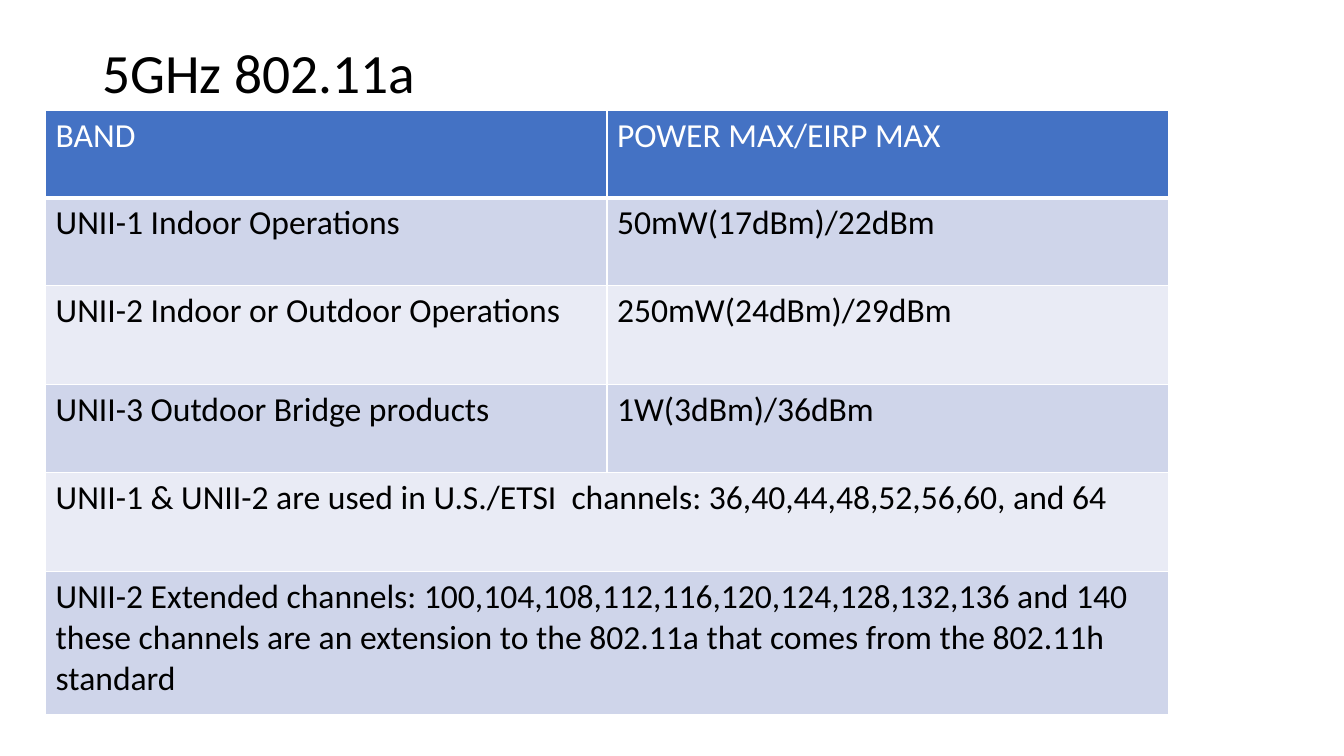
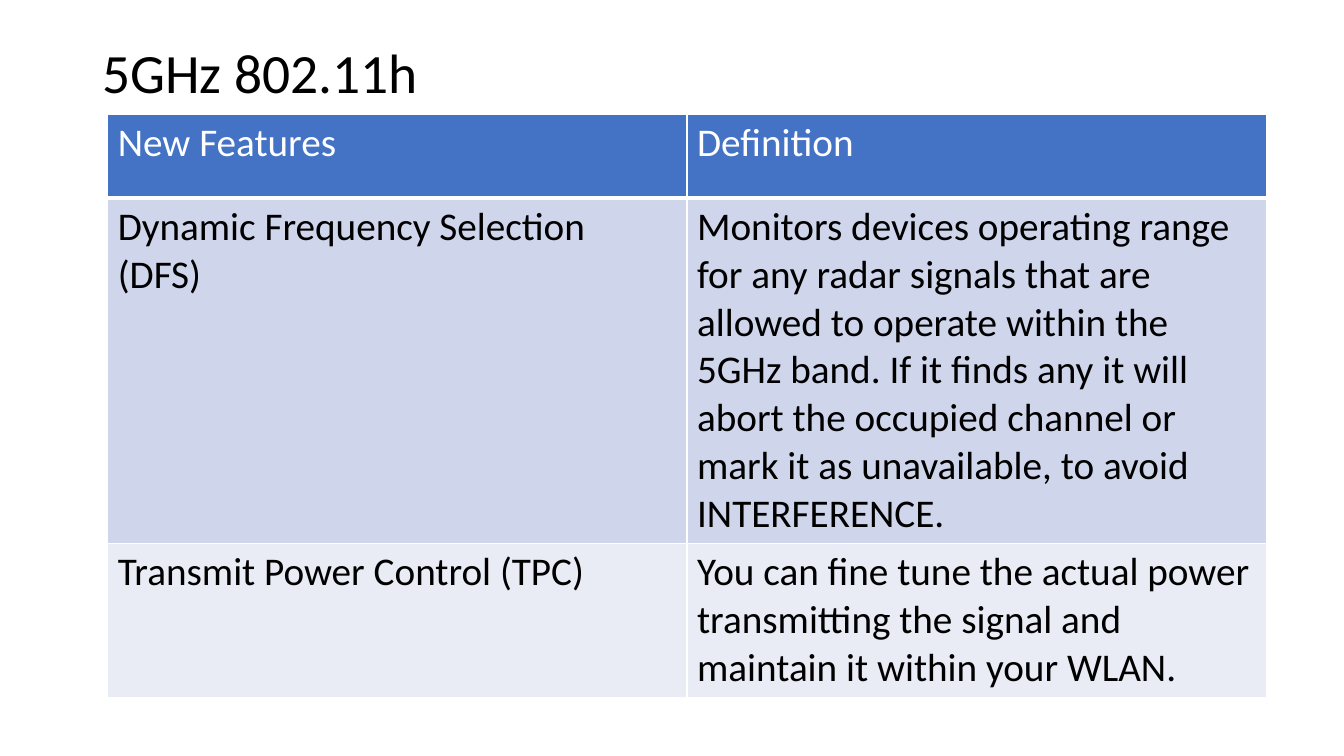
from pptx import Presentation
from pptx.dml.color import RGBColor
from pptx.enum.text import MSO_ANCHOR, MSO_AUTO_SIZE, PP_ALIGN
from pptx.oxml.ns import qn
from pptx.util import Pt
from lxml.etree import SubElement

COLORS = {
    "text": "000000",
    "header": "4472C4",
    "band_dark": "CFD5EA",
    "band_light": "E9EBF5",
    "white": "FFFFFF",
}


def color(name):
    return RGBColor.from_string(COLORS[name])


def assign(target, values):
    for name, value in values.items():
        setattr(target, name, value)


class Deck:
    font_name = "Calibri"
    title_box = {"left": Pt(66), "top": Pt(28.8), "width": Pt(828), "height": Pt(49.7)}
    title_size = 39.6

    def __init__(self):
        self.deck = Presentation()
        assign(self.deck, {"slide_width": Pt(960), "slide_height": Pt(540)})
        self.page = None

    def add_text(self, frame, text, size, color_name):
        """Put one left-aligned paragraph in a text frame."""
        para = frame.paragraphs[0]
        para.alignment = PP_ALIGN.LEFT
        span = para.add_run()
        span.text = text
        assign(span.font, {"name": self.font_name, "size": Pt(size), "bold": False})
        span.font.color.rgb = color(color_name)
        return para

    def add_page(self, title):
        self.page = self.deck.slides.add_slide(self.deck.slide_layouts[5])
        box = self.page.shapes.title
        assign(box, self.title_box)
        assign(box.text_frame, {
            "vertical_anchor": MSO_ANCHOR.MIDDLE,
            "auto_size": MSO_AUTO_SIZE.NONE,
            "word_wrap": True,
        })
        para = self.add_text(box.text_frame, title, self.title_size, "text")
        para.line_spacing = 0.9

    def add_borders(self, cell, bottom):
        properties = cell._tc.get_or_add_tcPr()
        for side, width in (("L", 1), ("R", 1), ("T", 1), ("B", bottom)):
            line = SubElement(properties, qn(f"a:ln{side}"), w=str(Pt(width)))
            fill = SubElement(line, qn("a:solidFill"))
            SubElement(fill, qn("a:srgbClr"), val=COLORS["white"])

    def add_table(self, left, top, column_width, heights, rows, size):
        """A row with a single text spans both columns."""
        columns = len(rows[0])
        frame = self.page.shapes.add_table(
            len(rows), columns, Pt(left), Pt(top),
            Pt(column_width * columns), Pt(sum(heights)))
        table = frame.table
        table.horz_banding = False
        for column in table.columns:
            column.width = Pt(column_width)
        for index, (height, texts) in enumerate(zip(heights, rows)):
            table.rows[index].height = Pt(height)
            is_header = index == 0
            band = "band_dark" if index % 2 else "band_light"
            for number in range(columns):
                cell = table.cell(index, number)
                self.add_borders(cell, 3 if is_header else 1)
                cell.fill.solid()
                cell.fill.fore_color.rgb = color("header" if is_header else band)
            if len(texts) < columns:
                table.cell(index, 0).merge(table.cell(index, columns - 1))
            for number, text in enumerate(texts):
                self.add_text(table.cell(index, number).text_frame, text, size,
                              "white" if is_header else "text")


def main():
    deck = Deck()

    # Bands and power limits
    deck.add_page("5GHz 802.11a")
    deck.add_table(32.6, 78.8, 401, [62.6, 62.6, 70.8, 62.6, 70.8, 102], [
        ["BAND", "POWER MAX/EIRP MAX"],
        ["UNII-1 Indoor Operations", "50mW(17dBm)/22dBm"],
        ["UNII-2 Indoor or Outdoor Operations", "250mW(24dBm)/29dBm"],
        ["UNII-3 Outdoor Bridge products", "1W(3dBm)/36dBm"],
        ["UNII-1 & UNII-2 are used in U.S./ETSI  channels: "
         "36,40,44,48,52,56,60, and 64"],
        ["UNII-2 Extended channels: 100,104,108,112,116,120,124,128,132,136 and 140 "
         "these channels are an extension to the 802.11a that comes from the "
         "802.11h standard"],
    ], size=24)

    # Features and definitions
    deck.add_page("5GHz 802.11h")
    deck.add_table(77, 81.8, 413.8, [59.6, 246, 109.5], [
        ["New Features", "Definition"],
        ["Dynamic Frequency Selection (DFS)",
         "Monitors devices operating range for any radar signals that are allowed "
         "to operate within the 5GHz band. If it finds any it will abort the "
         "occupied channel or mark it as unavailable, to avoid INTERFERENCE."],
        ["Transmit Power Control (TPC)",
         "You can fine tune the actual power transmitting the signal and maintain "
         "it within your WLAN."],
    ], size=28)

    deck.deck.save("out.pptx")


if __name__ == "__main__":
    main()
